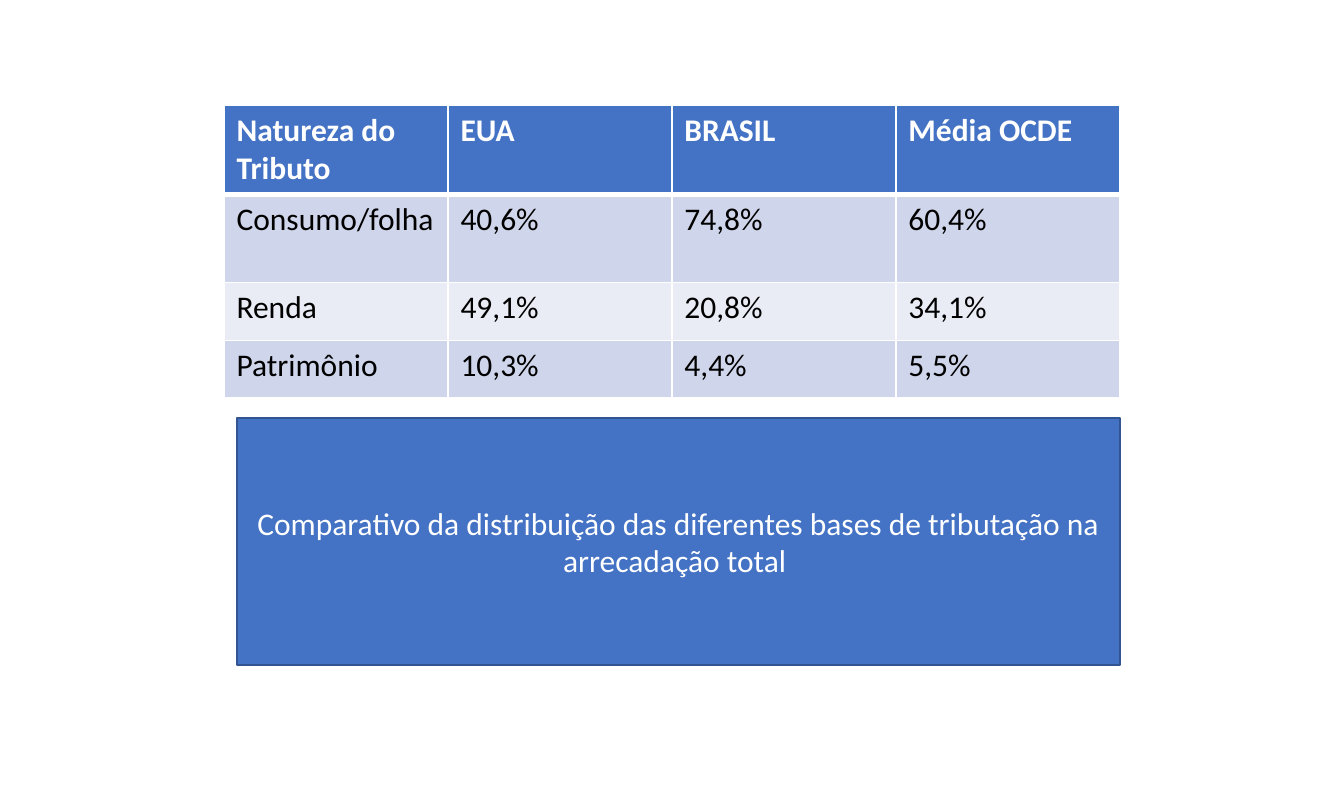
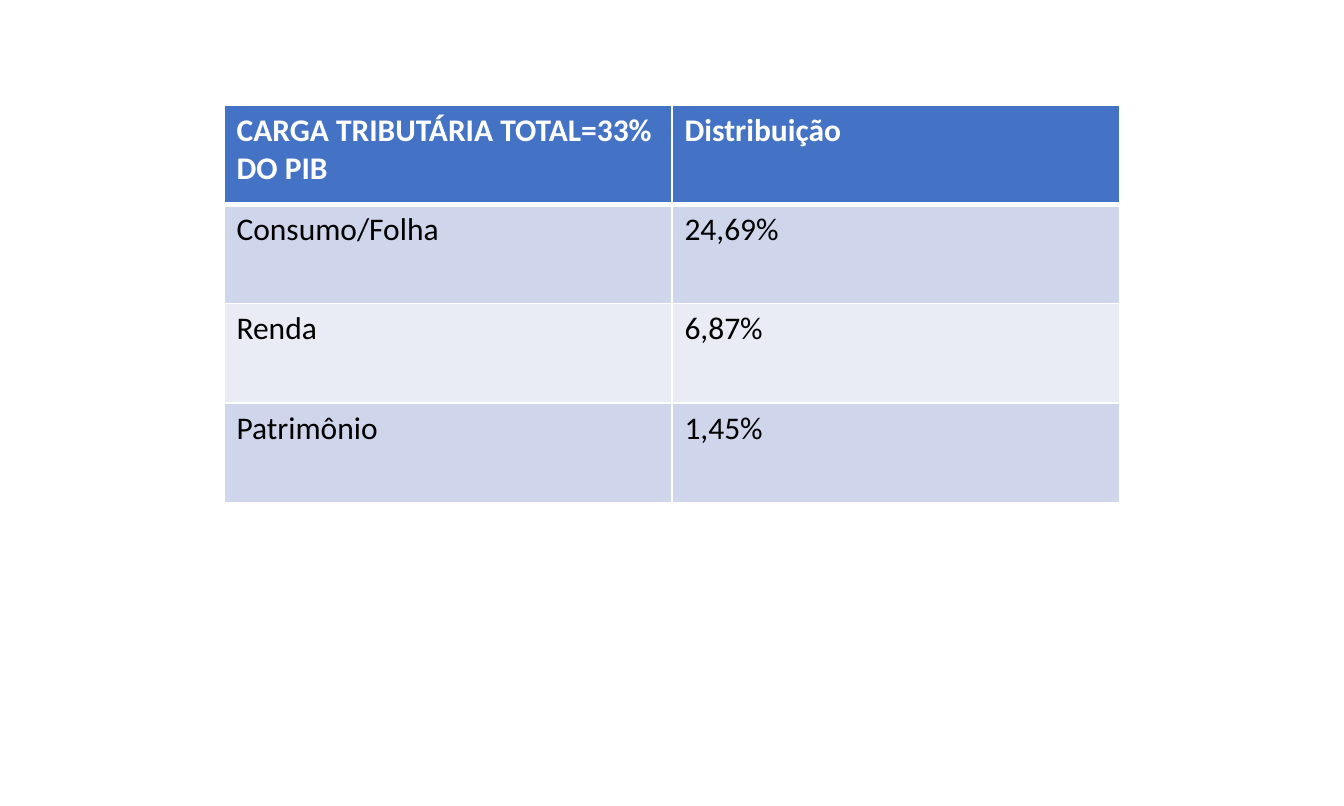
from dataclasses import dataclass

from lxml import etree
from pptx import Presentation
from pptx.dml.color import RGBColor
from pptx.enum.shapes import MSO_SHAPE
from pptx.enum.text import MSO_ANCHOR, PP_ALIGN
from pptx.oxml.ns import qn
from pptx.util import Inches, Pt

RECTANGLE = MSO_SHAPE.RECTANGLE
MIDDLE = MSO_ANCHOR.MIDDLE
CENTER = PP_ALIGN.CENTER


@dataclass(frozen=True)
class Theme:
    font: str = "Calibri"
    size: int = 18
    accent: str = "4472C4"
    outline: str = "325491"
    band_dark: str = "CFD5EA"
    band_light: str = "E9EBF5"
    light_text: str = "FFFFFF"
    dark_text: str = "000000"
    grid: str = "FFFFFF"
    grid_width: int = 1
    header_rule: int = 3


THEME = Theme()
SLIDE_W, SLIDE_H = Inches(10.67), Inches(6.4)
# The tables span the middle four of six columns.
COL = SLIDE_W / 6
TABLE_LEFT, TABLE_W = COL, 4 * COL
TABLE_TOP = 0.13 * SLIDE_H

COMPARISON = [
    ["Natureza do Tributo", "EUA", "BRASIL", "Média OCDE"],
    ["Consumo/folha", "40,6%", "74,8%", "60,4%"],
    ["Renda", "49,1%", "20,8%", "34,1%"],
    ["Patrimônio", "10,3%", "4,4%", "5,5%"],
]
TAX_BURDEN = [
    ["CARGA TRIBUTÁRIA TOTAL=33% DO PIB", "Distribuição"],
    ["Consumo/Folha", "24,69%"],
    ["Renda", "6,87%"],
    ["Patrimônio", "1,45%"],
]


def rgb(value):
    return RGBColor.from_string(value)


def fill_solid(target, color):
    target.fill.solid()
    target.fill.fore_color.rgb = rgb(color)


def write(tf, text, color, bold=False):
    tf.text = text
    font = tf.paragraphs[0].runs[0].font
    font.name, font.size, font.bold = THEME.font, Pt(THEME.size), bold
    font.color.rgb = rgb(color)


def set_borders(cell, top, bottom):
    """Draw the four cell borders; must run before the cell gets its fill."""
    tc_pr = cell._tc.get_or_add_tcPr()
    widths = {"a:lnL": THEME.grid_width, "a:lnR": THEME.grid_width,
              "a:lnT": top, "a:lnB": bottom}
    for tag, width in widths.items():
        ln = etree.SubElement(tc_pr, qn(tag), w=str(Pt(width)))
        fill = etree.SubElement(ln, qn("a:solidFill"))
        etree.SubElement(fill, qn("a:srgbClr"), val=THEME.grid)


def style_cell(cell, row, text):
    header = row == 0
    set_borders(cell,
                top=THEME.header_rule if row == 1 else THEME.grid_width,
                bottom=THEME.header_rule if header else THEME.grid_width)
    band = THEME.band_dark if row % 2 else THEME.band_light
    fill_solid(cell, THEME.accent if header else band)
    write(cell.text_frame, text,
          THEME.light_text if header else THEME.dark_text, bold=header)


def add_data_table(s, rows, heights):
    n_cols = len(rows[0])
    frame = s.shapes.add_table(len(rows), n_cols, int(TABLE_LEFT), int(TABLE_TOP),
                               int(TABLE_W), Inches(sum(heights)))
    table = frame.table
    for column in table.columns:
        column.width = int(TABLE_W / n_cols)
    for i, (values, height) in enumerate(zip(rows, heights)):
        table.rows[i].height = Inches(height)
        for j, text in enumerate(values):
            style_cell(table.cell(i, j), i, text)


def add_caption_box(s, text):
    left, width = Inches(1.88), Inches(7.01)
    sp = s.shapes.add_shape(RECTANGLE, left, Inches(3.32), width, Inches(1.96))
    sp.shadow.inherit = False
    fill_solid(sp, THEME.accent)
    sp.line.color.rgb = rgb(THEME.outline)
    sp.line.width = Pt(1)
    tf = sp.text_frame
    tf.word_wrap = True
    tf.vertical_anchor = MIDDLE
    write(tf, text, THEME.light_text)
    tf.paragraphs[0].alignment = CENTER


def main():
    prs = Presentation()
    prs.slide_width, prs.slide_height = SLIDE_W, SLIDE_H
    blank = prs.slide_layouts[6]

    s = prs.slides.add_slide(blank)
    add_data_table(s, COMPARISON, [0.7, 0.7, 0.46, 0.46])
    add_caption_box(s, "Comparativo da distribuição das diferentes bases "
                       "de tributação na arrecadação total ")

    s = prs.slides.add_slide(blank)
    add_data_table(s, TAX_BURDEN, [0.79] * 4)

    prs.save("out.pptx")


if __name__ == "__main__":
    main()
